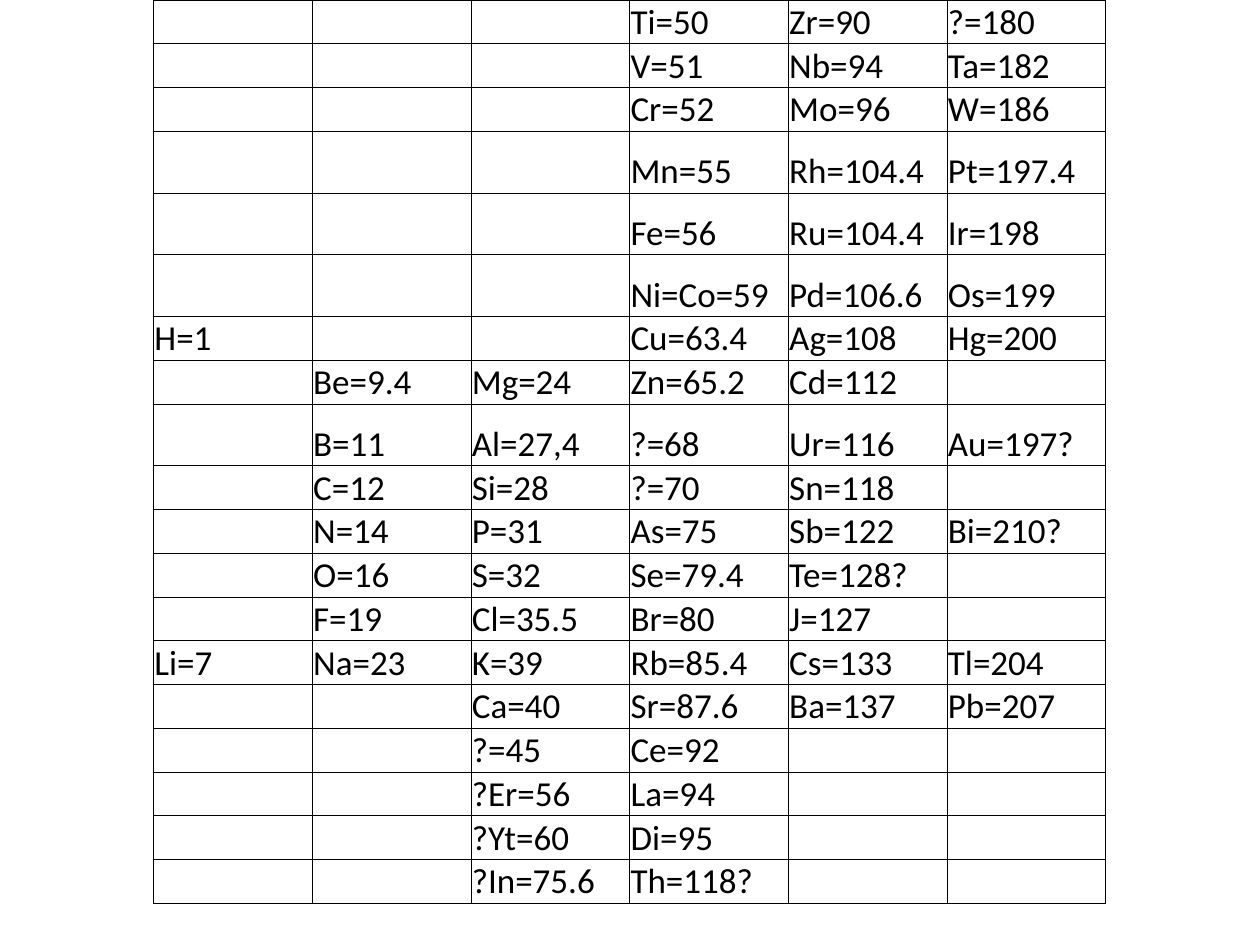
from lxml import etree
from pptx import Presentation
from pptx.dml.color import RGBColor
from pptx.enum.text import MSO_ANCHOR
from pptx.oxml.ns import qn
from pptx.util import Pt

BOTTOM = MSO_ANCHOR.BOTTOM
COLORS = {"ink": "000000"}
FONT, TEXT_SIZE = "Calibri", 20

# Element symbols with atomic weights, one tuple per table row
ELEMENTS = [
    ("", "", "", "Ti=50", "Zr=90", "?=180"),
    ("", "", "", "V=51", "Nb=94", "Ta=182"),
    ("", "", "", "Cr=52", "Mo=96", "W=186"),
    ("", "", "", "Mn=55", "Rh=104.4", "Pt=197.4"),
    ("", "", "", "Fe=56", "Ru=104.4", "Ir=198"),
    ("", "", "", "Ni=Co=59", "Pd=106.6", "Os=199"),
    ("H=1", "", "", "Cu=63.4", "Ag=108", "Hg=200"),
    ("", "Be=9.4", "Mg=24", "Zn=65.2", "Cd=112", ""),
    ("", "B=11", "Al=27,4", "?=68", "Ur=116", "Au=197?"),
    ("", "C=12", "Si=28", "?=70", "Sn=118", ""),
    ("", "N=14", "P=31", "As=75", "Sb=122", "Bi=210?"),
    ("", "O=16", "S=32", "Se=79.4", "Te=128?", ""),
    ("", "F=19", "Cl=35.5", "Br=80", "J=127", ""),
    ("Li=7", "Na=23", "K=39", "Rb=85.4", "Cs=133", "Tl=204"),
    ("", "", "Ca=40", "Sr=87.6", "Ba=137", "Pb=207"),
    ("", "", "?=45", "Ce=92", "", ""),
    ("", "", "?Er=56", "La=94", "", ""),
    ("", "", "?Yt=60", "Di=95", "", ""),
    ("", "", "?In=75.6", "Th=118?", "", ""),
]
TALL_ROWS = {3, 4, 5, 8}
ROW_HEIGHT, TALL_HEIGHT = 25, 35.3
LEFT, TOP, COLUMN_WIDTH = 87.8, 0, 90.7


def add_borders(cell):
    properties = cell._tc.get_or_add_tcPr()
    for position, side in enumerate(("lnL", "lnR", "lnT", "lnB")):
        line = etree.Element(qn(f"a:{side}"), w=str(Pt(0.5)))
        fill = etree.SubElement(line, qn("a:solidFill"))
        etree.SubElement(fill, qn("a:srgbClr"), val=COLORS["ink"])
        properties.insert(position, line)


def fill_cell(cell, text):
    cell.fill.background()
    cell.vertical_anchor = BOTTOM
    cell.margin_left = cell.margin_right = cell.margin_top = Pt(0.5)
    cell.margin_bottom = 0
    add_borders(cell)
    cell.text_frame.text = text
    for span in cell.text_frame.paragraphs[0].runs:
        span.font.name = FONT
        span.font.size = Pt(TEXT_SIZE)
        span.font.color.rgb = RGBColor.from_string(COLORS["ink"])


deck = Presentation()
deck.slide_width, deck.slide_height = Pt(720), Pt(540)
page = deck.slides.add_slide(deck.slide_layouts[6])

# Table of elements
heights = [TALL_HEIGHT if row in TALL_ROWS else ROW_HEIGHT
           for row in range(len(ELEMENTS))]
column_count = len(ELEMENTS[0])
frame = page.shapes.add_table(
    len(ELEMENTS), column_count, Pt(LEFT), Pt(TOP),
    Pt(COLUMN_WIDTH * column_count), Pt(sum(heights)))
table = frame.table
table.first_row = table.horz_banding = False
for column in table.columns:
    column.width = Pt(COLUMN_WIDTH)
for row, height, texts in zip(table.rows, heights, ELEMENTS):
    row.height = Pt(height)
    for cell, text in zip(row.cells, texts):
        fill_cell(cell, text)

deck.save("out.pptx")
